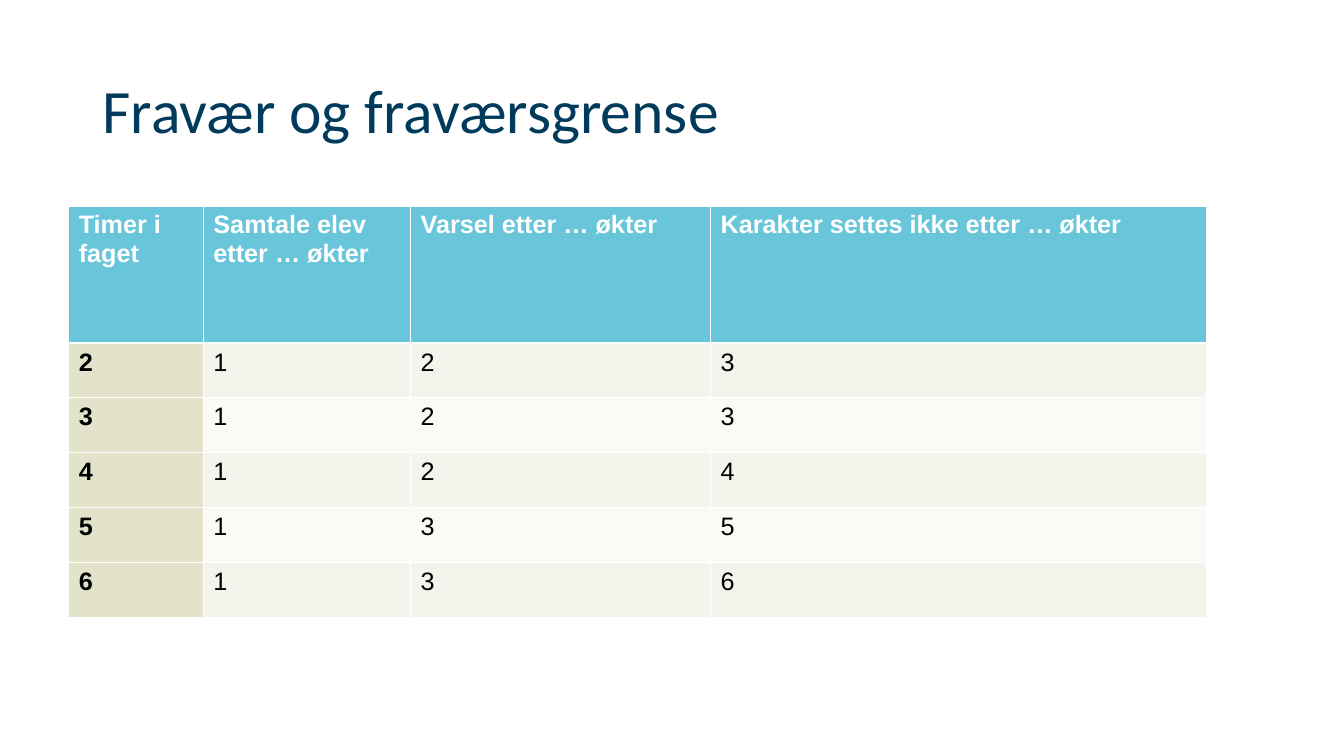
from lxml import etree
from pptx import Presentation
from pptx import util as u
from pptx.dml.color import RGBColor
from pptx.enum import text
from pptx.oxml.ns import qn

Pt = u.Pt


def paint(fmt, hue):
    """Give a fill a solid colour."""
    fmt.solid()
    fmt.fore_color.rgb = RGBColor.from_string(hue)


def edge(cell, side, width):
    """Draw one white cell border."""
    line = etree.SubElement(cell._tc.get_or_add_tcPr(), qn("a:ln" + side), w=str(Pt(width)))
    fill = etree.SubElement(line, qn("a:solidFill"))
    etree.SubElement(fill, qn("a:srgbClr"), val="FFFFFF")


deck = Presentation()
deck.slide_width, deck.slide_height = Pt(960), Pt(540)
slide = deck.slides.add_slide(deck.slide_layouts[5])

# Title
title = slide.shapes.title
title.left, title.top, title.width, title.height = Pt(66), Pt(28.75), Pt(828), Pt(104.4)
frame = title.text_frame
frame.text = "Fravær og fraværsgrense"
frame.vertical_anchor = text.MSO_ANCHOR.MIDDLE
para = frame.paragraphs[0]
para.alignment = text.PP_ALIGN.LEFT
para.line_spacing = 0.9
para.font.name, para.font.size = "Calibri", Pt(44)
paint(para.font.fill, "003B5C")

# Table content: hours, talk, warning, no grade
rows = [
    ("Timer i faget", "Samtale elev etter … økter", "Varsel etter … økter",
     "Karakter settes ikke etter … økter"),
    (2, 1, 2, 3),
    (3, 1, 2, 3),
    (4, 1, 2, 4),
    (5, 1, 3, 5),
    (6, 1, 3, 6),
]
widths = [96.2, 148, 214.3, 354.3]
heights = [97.9] + [39.15] * 5

# Table grid
grid = slide.shapes.add_table(len(rows), len(widths), Pt(49.1), Pt(147.2),
                              Pt(sum(widths)), Pt(sum(heights))).table
for col, width in zip(grid.columns, widths):
    col.width = Pt(width)
for row, height in zip(grid.rows, heights):
    row.height = Pt(height)

# Cells: blue header, beige first column, banded body
for r, row in enumerate(rows):
    for c, value in enumerate(row):
        cell = grid.cell(r, c)
        cell.text = str(value)
        for side in "LRTB":
            thick = (r, side) in ((0, "B"), (1, "T"))
            edge(cell, side, 2.09 if thick else 0.75)
        if r == 0:
            back = "68C5DA"
        elif c == 0:
            back = "E3E3CC"
        else:
            back = "F4F4EC" if r % 2 else "FAFAF6"
        paint(cell.fill, back)
        font = cell.text_frame.paragraphs[0].font
        font.name, font.size = "Arial", Pt(18)
        font.bold = r == 0 or c == 0
        paint(font.fill, "000000" if r else "FFFFFF")

deck.save("out.pptx")
